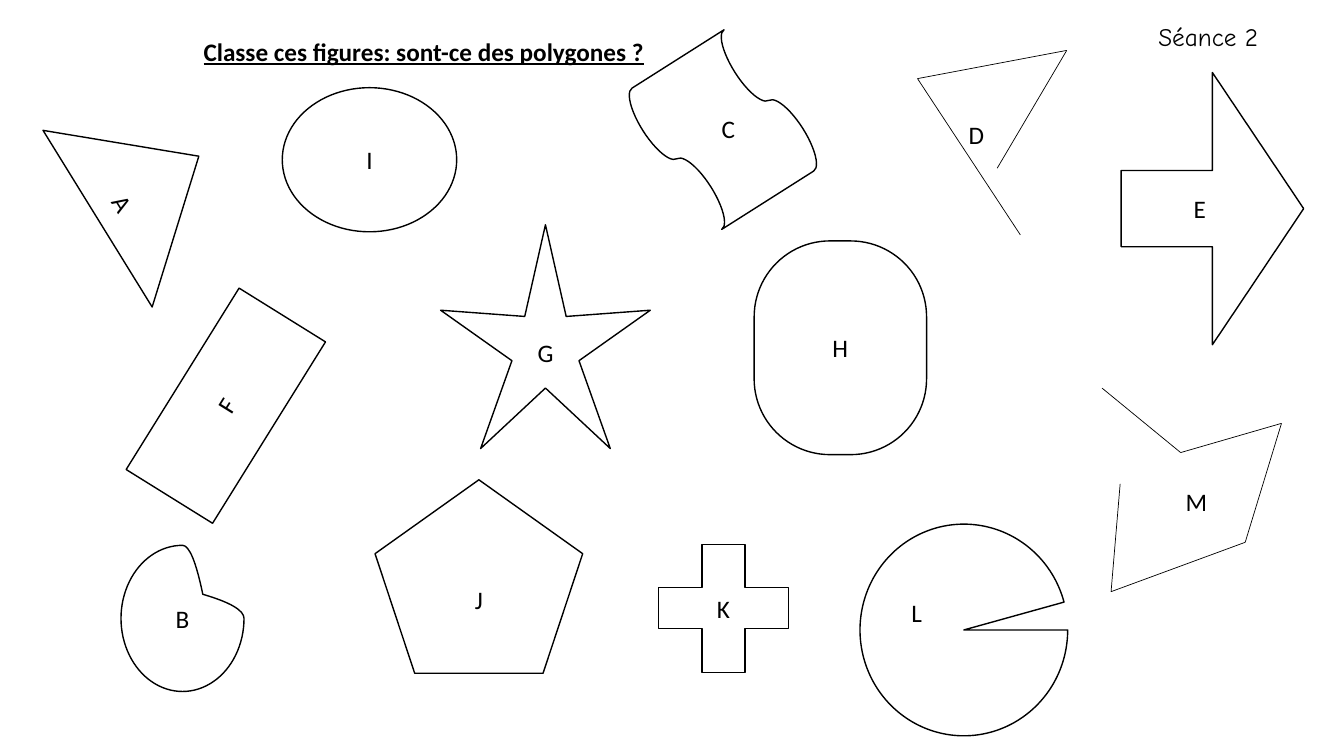
"""Builds the worksheet slide on sorting figures into polygons and non-polygons."""
from itertools import pairwise

from lxml.etree import SubElement
from pptx import Presentation
from pptx.dml.color import RGBColor
from pptx.enum.shapes import MSO_CONNECTOR, MSO_SHAPE
from pptx.enum.text import MSO_ANCHOR, MSO_AUTO_SIZE, PP_ALIGN
from pptx.oxml.ns import qn
from pptx.util import Emu, Pt

BLACK = RGBColor(0, 0, 0)
WHITE = RGBColor(255, 255, 255)
BODY_FONT = "Calibri"
SESSION_FONT = "Comic Neue"
SLIDE_SIZE = (1333, 750)

# label, preset, (left, top, width, height), rotation, adjustments
FIGURES = [
    ("A", MSO_SHAPE.ISOSCELES_TRIANGLE, (44, 127, 206, 118), 58.3, ()),
    ("F", MSO_SHAPE.RECTANGLE, (118, 352, 212, 101), 301.9, ()),
    ("E", MSO_SHAPE.RIGHT_ARROW, (1112, 72, 181, 270), 0, (0.28, 0.5)),
    ("G", MSO_SHAPE.STAR_5_POINT, (437, 223, 208, 222), 0, (0.16,)),
    ("H", MSO_SHAPE.ROUNDED_RECTANGLE, (748, 239, 171, 212), 0, (0.44,)),
    ("I", MSO_SHAPE.OVAL, (280, 87, 173, 143), 0, ()),
    ("J", MSO_SHAPE.REGULAR_PENTAGON, (372, 476, 206, 192), 0, ()),
    ("", MSO_SHAPE.PIE, (853, 520, 206, 210), 0, (0, 206.68)),
    ("K", MSO_SHAPE.CROSS, (653, 540, 129, 127), 0, (0.34,)),
    ("B", MSO_SHAPE.TEAR, (120, 541, 122, 145), 0, (0.33,)),
    ("", MSO_SHAPE.FLOWCHART_PUNCHED_TAPE, (634, 61, 166, 135), 237.6, ()),
]

OPEN_LINES = [
    [(1012, 233), (910, 78), (1058, 50), (989, 167)],
    [(1111, 480), (1102, 587), (1235, 538), (1271, 420), (1171, 449), (1093, 385)],
]

# text, (left, top, width, height), font, is title
TEXTS = [
    ("Classe ces figures: sont-ce des polygones ?", (192, 31, 461, 40), BODY_FONT, True),
    ("D", (951, 113, 36, 40), BODY_FONT, False),
    ("L", (894, 588, 31, 40), BODY_FONT, False),
    ("M", (1166, 478, 42, 40), BODY_FONT, False),
    ("C", (706, 108, 34, 40), BODY_FONT, False),
    ("Séance 2", (1139, 16, 127, 40), SESSION_FONT, False),
]


def px(*lengths):
    return [Emu(n * 9144) for n in lengths]


def write(tf, text, font=BODY_FONT, title=False):
    p = tf.paragraphs[0]
    p.text = text
    p.font.name = font
    p.font.size = Pt(18)
    p.font.color.rgb = BLACK
    if title:
        p.font.bold = p.font.underline = True
    return p


def add_figure(shapes, label, preset, box, rotation, adjustments):
    sp = shapes.add_shape(preset, *px(*box))
    sp.rotation = rotation
    for i, value in enumerate(adjustments):
        sp.adjustments[i] = value
    sp.shadow.inherit = False
    sp.fill.solid()
    sp.fill.fore_color.rgb = WHITE
    sp.line.color.rgb = BLACK
    sp.line.width = Pt(1)
    if label:
        sp.text_frame.vertical_anchor = MSO_ANCHOR.MIDDLE
        write(sp.text_frame, label).alignment = PP_ALIGN.CENTER


def add_open_line(shapes, points):
    group = shapes.add_group_shape()
    for start, end in pairwise(points):
        line = group.shapes.add_connector(MSO_CONNECTOR.STRAIGHT, *px(*start, *end))
        line.line.color.rgb = BLACK
        line.line.width = Pt(0.5)
        SubElement(line.element.spPr, qn("a:effectLst"))


def add_text(shapes, text, box, font, title):
    tf = shapes.add_textbox(*px(*box)).text_frame
    tf.word_wrap = False
    tf.auto_size = MSO_AUTO_SIZE.SHAPE_TO_FIT_TEXT
    write(tf, text, font, title)


def main():
    prs = Presentation()
    prs.slide_width, prs.slide_height = px(*SLIDE_SIZE)
    s = prs.slides.add_slide(prs.slide_layouts[6])
    for figure in FIGURES:
        add_figure(s.shapes, *figure)
    for points in OPEN_LINES:
        add_open_line(s.shapes, points)
    for text in TEXTS:
        add_text(s.shapes, *text)
    prs.save("out.pptx")


if __name__ == "__main__":
    main()
